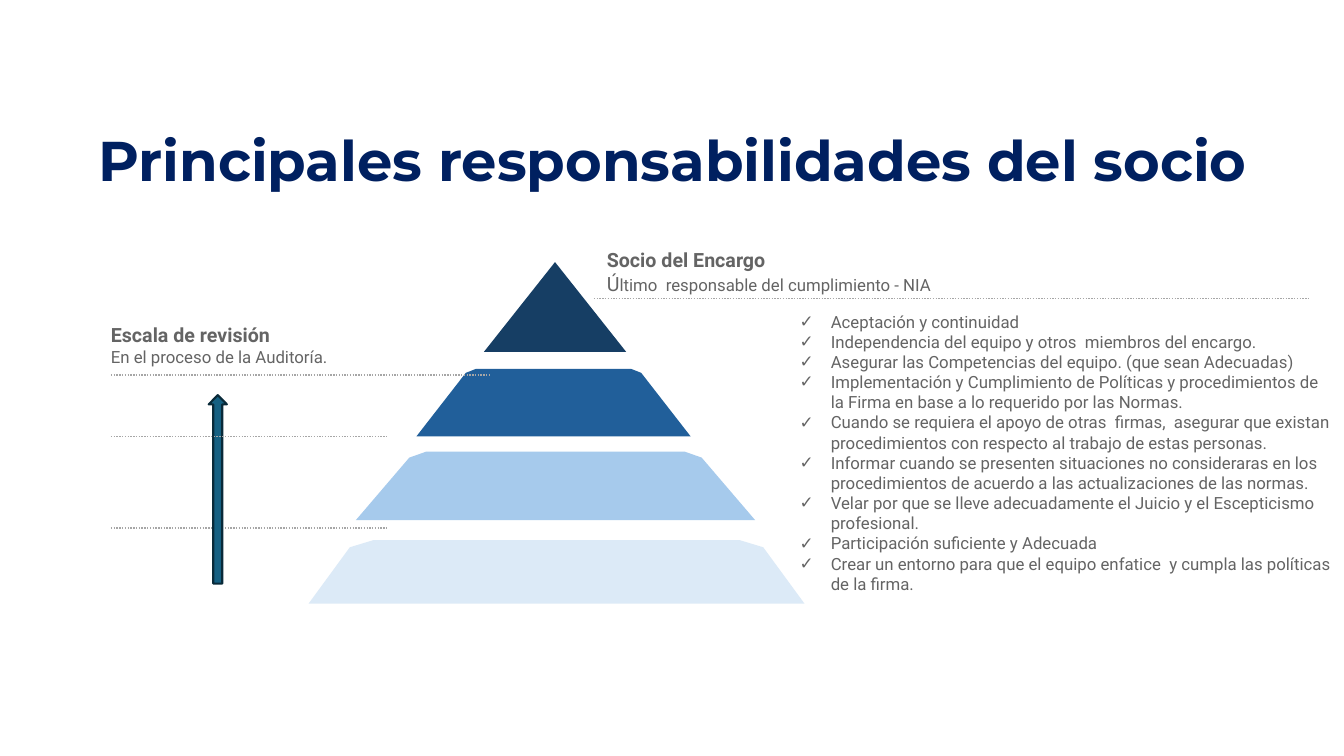
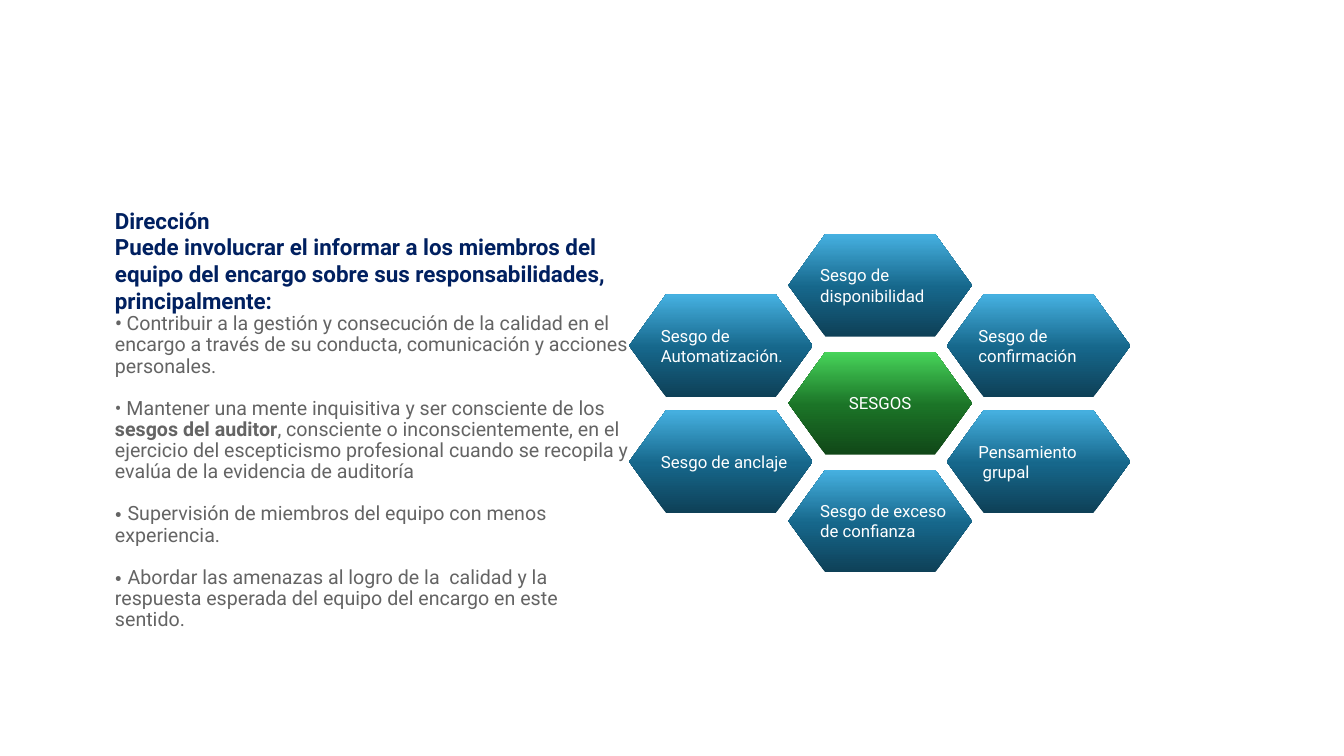
from dataclasses import dataclass, replace

from pptx import Presentation
from pptx.dml.color import RGBColor
from pptx.enum.dml import MSO_LINE
from pptx.enum.shapes import MSO_CONNECTOR, MSO_SHAPE
from pptx.enum.text import MSO_ANCHOR, MSO_AUTO_SIZE, PP_ALIGN
from pptx.oxml.ns import qn
from pptx.oxml.xmlchemy import OxmlElement
from pptx.util import Emu, Pt

PX = 9144  # 100 px to the inch


@dataclass(frozen=True)
class Theme:
    heading_font: str = "Montserrat"
    body_font: str = "Roboto"
    navy: str = "002060"
    gray: str = "646464"
    white: str = "FFFFFF"
    dotted: str = "A6A6A6"
    arrow: str = "156082"
    arrow_edge: str = "092A39"
    tiers: tuple = ("163E64", "215F9A", "A6CAEC", "DCEAF7")
    blue_gradient: tuple = ((0, "0E4057"), (48, "16678B"), (100, "46B1E1"))
    green_gradient: tuple = ((0, "114818"), (48, "1B7427"), (100, "47D45A"))
    title_size: int = 40
    lead_size: int = 16
    label_size: int = 14
    text_size: int = 12


THEME = Theme()
DEFAULT_INSETS = (10, 5, 10, 5)
NOTE_INSETS = (10, 5, 0, 8)


@dataclass(frozen=True)
class Run:
    text: str
    size: int = THEME.text_size
    color: str = THEME.gray
    bold: bool = False
    italic: bool = False
    font: str = THEME.body_font


# Content
RESPONSIBILITIES = (
    "Aceptación y continuidad",
    "Independencia del equipo y otros  miembros del encargo.",
    "Asegurar las Competencias del equipo. (que sean Adecuadas)",
    "Implementación y Cumplimiento de Políticas y procedimientos de la Firma en base a lo "
    "requerido por las Normas.",
    "Cuando se requiera el apoyo de otras  firmas,  asegurar que existan procedimientos con "
    "respecto al trabajo de estas personas.",
    "Informar cuando se presenten situaciones no consideraras en los procedimientos de acuerdo "
    "a las actualizaciones de las normas.",
    "Velar por que se lleve adecuadamente el Juicio y el Escepticismo profesional.",
    "Participación suficiente y Adecuada",
    "Crear un entorno para que el equipo enfatice  y cumpla las políticas de la firma.",
)

DETAIL = Run("", THEME.label_size)
BULLET = Run("• ", THEME.label_size, bold=True)
DUTIES = (
    (replace(BULLET, italic=True),
     replace(DETAIL, text="Contribuir a la gestión y consecución de la calidad en el encargo a "
                          "través de su conducta, comunicación y acciones personales.")),
    (replace(DETAIL, text="• Mantener una mente inquisitiva y ser consciente de los "),
     replace(DETAIL, text="sesgos del auditor", bold=True),
     replace(DETAIL, text=", consciente o inconscientemente, en el ejercicio del escepticismo "
                          "profesional cuando se recopila y evalúa de la evidencia de auditoría")),
    (replace(BULLET, font=THEME.heading_font),
     replace(DETAIL, text="Supervisión de miembros del equipo con menos experiencia.")),
    (replace(BULLET, font=THEME.heading_font),
     replace(DETAIL, text="Abordar las amenazas al logro de la  calidad y la respuesta esperada "
                          "del equipo del encargo en este sentido.")),
)

# Tiers below the peak: center, half widths and heights at base, shoulder and top
PYRAMID_TIERS = (
    (549, (136, 87, 77), (433, 370, 366)),
    (551, (198, 145, 128), (516, 454, 448)),
    (552, (246, 205, 182), (599, 543, 536)),
)

HEXAGON_SIZE = (182, 102)
HEXAGON_COLUMNS = (624, 782, 939)
# Column, top, lines
BIASES = (
    (0, 292, ("Sesgo de", "Automatización.")),
    (2, 292, ("Sesgo de", "confirmación")),
    (1, 232, ("Sesgo de", "disponibilidad")),
    (0, 407, ("Sesgo de anclaje",)),
    (2, 407, ("Pensamiento", " grupal")),
    (1, 466, ("Sesgo de exceso", "de confianza")),
)


def px(*lengths):
    return [Emu(length * PX) for length in lengths]


def rgb(color):
    return RGBColor.from_string(color)


# Text
def set_text(shape, paragraphs, insets=DEFAULT_INSETS, anchor=MSO_ANCHOR.TOP,
             align=PP_ALIGN.LEFT, wrap=True, line_spacing=1.0, gap=0, check_marks=False):
    """Fill a shape with paragraphs, each a sequence of runs."""
    frame = shape.text_frame
    frame.auto_size = MSO_AUTO_SIZE.NONE
    frame.word_wrap = wrap
    frame.vertical_anchor = anchor
    (frame.margin_left, frame.margin_top,
     frame.margin_right, frame.margin_bottom) = px(*insets)
    for index, runs in enumerate(paragraphs):
        paragraph = frame.add_paragraph() if index else frame.paragraphs[0]
        paragraph.alignment = align
        paragraph.line_spacing = line_spacing
        paragraph.space_before = Pt(gap if index else 0)
        paragraph.space_after = Pt(0)
        set_bullet(paragraph, check_marks)
        for style in runs:
            run = paragraph.add_run()
            run.text = style.text
            font = run.font
            font.name, font.size = style.font, Pt(style.size)
            font.bold, font.italic = style.bold, style.italic
            font.color.rgb = rgb(style.color)


def set_bullet(paragraph, check_mark):
    properties = paragraph._p.get_or_add_pPr()
    indent = px(31)[0] if check_mark else 0
    properties.set("marL", str(indent))
    properties.set("indent", str(-indent))
    bullet = OxmlElement("a:buChar" if check_mark else "a:buNone")
    if check_mark:
        bullet.set("char", "✓")
    properties.append(bullet)


def place(shape, left, top, width, height):
    shape.left, shape.top, shape.width, shape.height = px(left, top, width, height)
    return shape


def add_label(slide, box, heading, detail_runs, insets):
    """Bold heading over one detail line, resting on a dotted rule."""
    shape = slide.shapes.add_textbox(*px(*box))
    heading_run = Run(heading, THEME.label_size, bold=True)
    set_text(shape, ((heading_run,), detail_runs), insets, MSO_ANCHOR.BOTTOM)


# Shapes
def paint(shape, color):
    shape.shadow.inherit = False
    shape.fill.solid()
    shape.fill.fore_color.rgb = rgb(color)
    shape.line.fill.background()


def add_dotted_rule(slide, left, right, y):
    rule = slide.shapes.add_connector(MSO_CONNECTOR.STRAIGHT, *px(left, y, right, y))
    rule.line.color.rgb = rgb(THEME.dotted)
    rule.line.width = Pt(1)
    rule.line.dash_style = MSO_LINE.ROUND_DOT
    rule._element.spPr.append(OxmlElement("a:effectLst"))


def add_pyramid(slide):
    peak = slide.shapes.add_shape(MSO_SHAPE.ISOSCELES_TRIANGLE, *px(480, 260, 141, 89))
    paint(peak, THEME.tiers[0])
    for color, (center, halves, levels) in zip(THEME.tiers[1:], PYRAMID_TIERS):
        left_side = [(center - half, y) for half, y in zip(halves, levels)]
        right_side = [(center + half, y) for half, y in zip(halves, levels)]
        builder = slide.shapes.build_freeform(*left_side[0], scale=PX)
        builder.add_line_segments(left_side[1:] + right_side[::-1], close=True)
        paint(builder.convert_to_shape(), color)


def add_review_arrow(slide):
    arrow = slide.shapes.add_shape(MSO_SHAPE.UP_ARROW, *px(207, 392, 18, 187))
    arrow.adjustments[0], arrow.adjustments[1] = 0.5, 0.51
    paint(arrow, THEME.arrow)
    arrow.line.color.rgb = rgb(THEME.arrow_edge)
    arrow.line.width = Pt(1.5)


def set_gradient(shape, stops):
    """Vertical gradient, first stop at the bottom."""
    shape.fill.gradient()
    shape.fill.gradient_angle = 90
    stop_list = shape._element.spPr.find(".//" + qn("a:gsLst"))
    for stop in list(stop_list):
        stop_list.remove(stop)
    for position, color in stops:
        stop = OxmlElement("a:gs")
        stop.set("pos", str(position * 1000))
        color_element = OxmlElement("a:srgbClr")
        color_element.set("val", color)
        stop.append(color_element)
        stop_list.append(stop)


def add_hexagon(slide, column, top, lines, gradient=THEME.blue_gradient, align=PP_ALIGN.LEFT):
    box = px(HEXAGON_COLUMNS[column], top, *HEXAGON_SIZE)
    shape = slide.shapes.add_shape(MSO_SHAPE.HEXAGON, *box)
    shape.adjustments[0] = 0.36
    shape.shadow.inherit = False
    shape.line.fill.background()
    set_gradient(shape, gradient)
    paragraphs = [(Run(line, color=THEME.white),) for line in lines]
    set_text(shape, paragraphs, (4, 4, 4, 4), MSO_ANCHOR.MIDDLE, align, wrap=False)


# Slides
def add_slide(presentation):
    """Slide with a title and a body placeholder."""
    slide = presentation.slides.add_slide(presentation.slide_layouts[1])
    return slide, slide.shapes.title, slide.placeholders[1]


def build_responsibilities(presentation):
    slide, title, body = add_slide(presentation)
    place(title, 53, 118, 1228, 89)
    title_run = Run("Principales responsabilidades del socio", THEME.title_size, THEME.navy,
                    bold=True, font=THEME.heading_font)
    set_text(title, ((title_run,),), anchor=MSO_ANCHOR.MIDDLE, align=PP_ALIGN.CENTER,
             line_spacing=0.9)
    place(body, 783, 301, 541, 296)
    set_text(body, [(Run(item),) for item in RESPONSIBILITIES], NOTE_INSETS,
             MSO_ANCHOR.BOTTOM, check_marks=True)

    add_pyramid(slide)
    add_dotted_rule(slide, 589, 1299, 296)
    add_label(slide, (592, 241, 349, 60), "Socio del Encargo",
              (Run("Ú", THEME.label_size), Run("ltimo  responsable del cumplimiento - NIA")),
              NOTE_INSETS)
    add_dotted_rule(slide, 110, 385, 524)
    add_dotted_rule(slide, 110, 487, 372)
    add_label(slide, (110, 315, 314, 57), "Escala de revisión",
              (Run("En el proceso de la Auditoría."),), (0, 5, 0, 8))
    add_review_arrow(slide)
    add_dotted_rule(slide, 110, 385, 433)


def build_biases(presentation):
    slide, title, body = add_slide(presentation)
    place(title, 104, 200, 536, 118)
    lead = Run("Dirección", THEME.lead_size, THEME.navy, bold=True)
    explanation = replace(lead, text="Puede involucrar el informar a los miembros del equipo del "
                                     "encargo sobre sus responsabilidades, principalmente:")
    set_text(title, ((lead,), (explanation,)))
    place(body, 104, 324, 521, 310)
    set_text(body, DUTIES, NOTE_INSETS, MSO_ANCHOR.BOTTOM, line_spacing=0.9, gap=15)

    for column, top, lines in BIASES:
        add_hexagon(slide, column, top, lines)
    add_hexagon(slide, 1, 349, ("SESGOS",), THEME.green_gradient, PP_ALIGN.CENTER)


def main():
    presentation = Presentation()
    presentation.slide_width, presentation.slide_height = px(1333, 750)
    build_responsibilities(presentation)
    build_biases(presentation)
    presentation.save("out.pptx")


if __name__ == "__main__":
    main()
